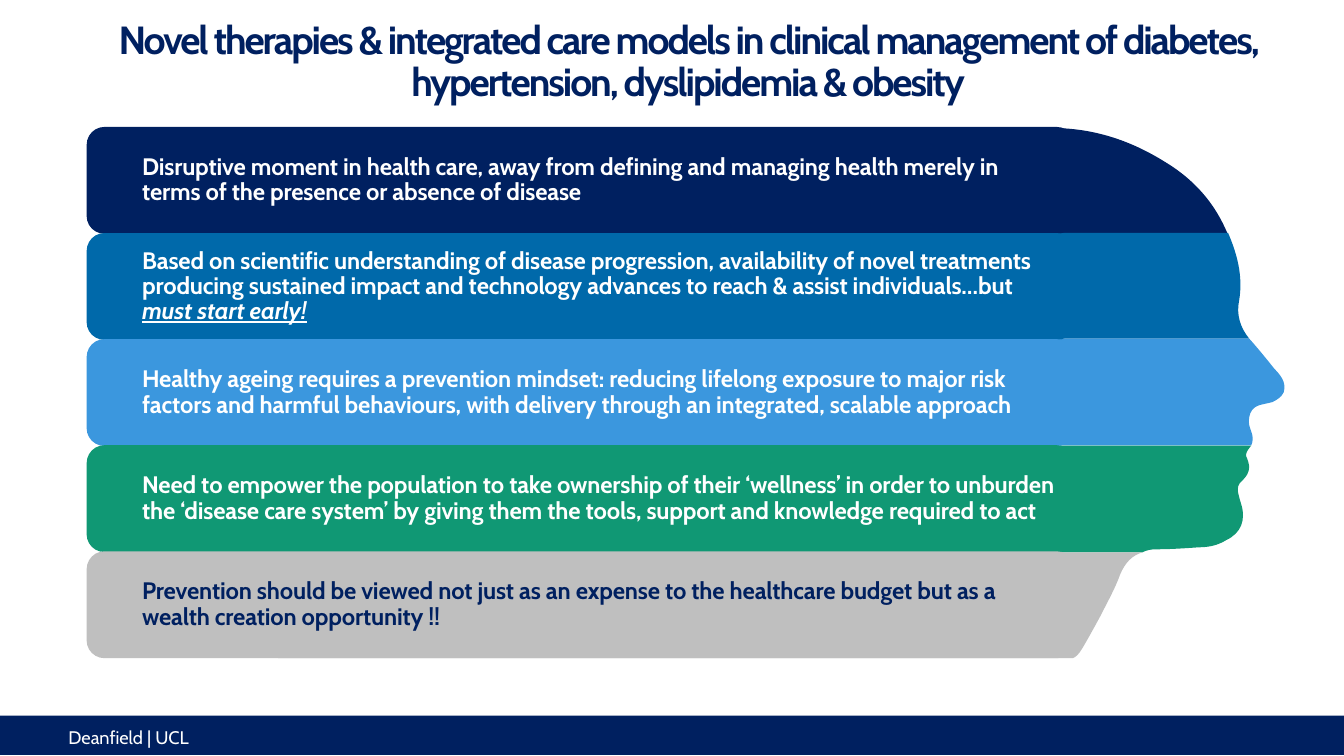
from lxml import etree
from pptx import Presentation
from pptx.dml.color import RGBColor
from pptx.enum.shapes import MSO_SHAPE as Shape
from pptx.enum.text import MSO_ANCHOR as Anchor, PP_ALIGN as Align
from pptx.oxml.ns import qn
from pptx.util import Inches, Pt

NAVY = RGBColor(0x00, 0x20, 0x60)
BLUE = RGBColor(0x00, 0x69, 0xAA)
SKY = RGBColor(0x3B, 0x97, 0xDE)
GREEN = RGBColor(0x10, 0x98, 0x74)
GREY = RGBColor(0xBF, 0xBF, 0xBF)
WHITE = RGBColor(0xFF, 0xFF, 0xFF)
FONT = "Cabin"
BAND_LEFT, BAND_WIDTH, BAND_HEIGHT = 0.86, 9.8, 1.06
FIRST_TOP, LAST_TOP = 1.26, 5.47
CAP_LEFT, CAP_SHIFT, CAP_RADIUS = 4.21, 0.485, 0.53

# Each band: fill, text colour, plain text, emphasised ending
BANDS = [
    (NAVY, WHITE, "Disruptive moment in health care, away from defining and managing health "
     "merely in terms of the presence or absence of disease", ""),
    (BLUE, WHITE, "Based on scientific understanding of disease progression, availability of "
     "novel treatments producing sustained impact and technology advances to reach & assist "
     "individuals…but ", "must start early!"),
    (SKY, WHITE, "Healthy ageing requires a prevention mindset: reducing lifelong exposure to "
     "major risk factors and harmful behaviours, with delivery through an integrated, "
     "scalable approach", ""),
    (GREEN, WHITE, "Need to empower the population to take ownership of their ‘wellness’ in "
     "order to unburden the ‘disease care system’ by giving them the tools, support and "
     "knowledge required to act", ""),
    (GREY, NAVY, "Prevention should be viewed not just as an expense to the healthcare budget "
     "but as a wealth creation opportunity !!", ""),
]

# Right edge of each head slice: first point, then cubic curves (two controls, end)
PROFILES = [
    ((10.43, 1.27), [
        ((10.84, 1.27), (11.21, 1.39), (11.56, 1.61)),
        ((11.84, 1.78), (12.05, 2.01), (12.18, 2.33))]),
    ((12.18, 2.31), [
        ((12.27, 2.52), (12.33, 2.74), (12.29, 2.98)),
        ((12.26, 3.12), (12.3, 3.25), (12.39, 3.36))]),
    ((12.39, 3.36), [
        ((12.48, 3.46), (12.56, 3.56), (12.64, 3.66)),
        ((12.66, 3.68), (12.68, 3.7), (12.7, 3.73)),
        ((12.73, 3.77), (12.74, 3.81), (12.74, 3.85)),
        ((12.74, 3.91), (12.7, 3.95), (12.62, 3.99)),
        ((12.58, 4), (12.53, 4.01), (12.49, 4.02)),
        ((12.43, 4.04), (12.4, 4.08), (12.39, 4.14)),
        ((12.38, 4.19), (12.39, 4.23), (12.41, 4.28)),
        ((12.43, 4.33), (12.43, 4.38), (12.41, 4.42))]),
    ((12.41, 4.42), [
        ((12.4, 4.43), (12.39, 4.45), (12.38, 4.46)),
        ((12.36, 4.49), (12.35, 4.52), (12.37, 4.55)),
        ((12.38, 4.58), (12.39, 4.61), (12.39, 4.63)),
        ((12.39, 4.69), (12.36, 4.73), (12.32, 4.77)),
        ((12.28, 4.8), (12.27, 4.84), (12.28, 4.89)),
        ((12.29, 4.93), (12.3, 4.97), (12.31, 5)),
        ((12.36, 5.16), (12.31, 5.29), (12.16, 5.36)),
        ((12.08, 5.41), (11.99, 5.43), (11.89, 5.43)),
        ((11.75, 5.44), (11.61, 5.45), (11.47, 5.45)),
        ((11.41, 5.45), (11.37, 5.46), (11.33, 5.48))]),
    ((11.33, 5.48), [
        ((11.23, 5.51), (11.16, 5.58), (11.11, 5.7)),
        ((11.06, 5.84), (10.98, 5.98), (10.91, 6.12)),
        ((10.85, 6.23), (10.79, 6.34), (10.73, 6.44)),
        ((10.7, 6.49), (10.67, 6.52), (10.64, 6.53))]),
]


def paint(shape, color):
    shape.fill.solid()
    shape.fill.fore_color.rgb = color
    shape.line.fill.background()
    shape.shadow.inherit = False


def style(span, size, color, bold=False, spacing=0):
    span.font.name = FONT
    span.font.size = Pt(size)
    span.font.bold = bold
    span.font.color.rgb = color
    if spacing:
        span._r.get_or_add_rPr().set("spc", str(round(spacing * 100)))


def bend_segment(segment, controls, shape):
    """Turn a straight outline segment into a cubic curve."""
    segment.tag = qn("a:cubicBezTo")
    for index, (x, y) in enumerate(controls):
        point = etree.Element(qn("a:pt"), x=str(Inches(x) - shape.left),
                              y=str(Inches(y) - shape.top))
        segment.insert(index, point)


def add_head_slice(page, left, profile, color):
    start, edge = profile
    top, bottom = start[1], edge[-1][2][1]
    middle, shoulder = (top + bottom) / 2, left + CAP_RADIUS
    pull = CAP_RADIUS * 0.45
    cap = [((left + pull, bottom), (left, bottom - pull), (left, middle)),
           ((left, top + pull), (left + pull, top), (shoulder, top))]
    # A straight base joins the edge to the rounded cap
    segments = edge + [(None, None, (shoulder, bottom))] + cap
    builder = page.shapes.build_freeform(Inches(start[0]), Inches(start[1]))
    builder.add_line_segments([(Inches(x), Inches(y)) for _, _, (x, y) in segments], close=True)
    head = builder.convert_to_shape()
    lines = list(head._element.iter(qn("a:lnTo")))
    for line, (first, second, _) in zip(lines, segments):
        if first:
            bend_segment(line, (first, second), head)
    paint(head, color)


def add_band(page, left, top, width, height, band):
    fill, color, text, emphasis = band
    box = page.shapes.add_shape(Shape.ROUNDED_RECTANGLE, Inches(left), Inches(top),
                                Inches(width), Inches(height))
    paint(box, fill)
    frame = box.text_frame
    frame.word_wrap = True
    frame.vertical_anchor = Anchor.MIDDLE
    frame.text = text
    para = frame.paragraphs[0]
    para.alignment = Align.LEFT
    para.line_spacing = Pt(18)
    para._p.get_or_add_pPr().set("marL", str(Inches(0.4)))
    if emphasis:
        ending = para.add_run()
        ending.text = emphasis
        ending.font.italic = ending.font.underline = True
    for span in para.runs:
        style(span, 17, color, bold=True, spacing=-0.13)


def add_title(page, left, top, width, height):
    box = page.shapes.add_textbox(Inches(left), Inches(top), Inches(width), Inches(height))
    frame = box.text_frame
    frame.word_wrap = True
    frame.vertical_anchor = Anchor.MIDDLE
    frame.margin_left = frame.margin_right = Inches(0.03)
    frame.text = ("Novel therapies & integrated care models in clinical management of "
                  "diabetes, hypertension, dyslipidemia & obesity")
    para = frame.paragraphs[0]
    para.alignment = Align.CENTER
    para.line_spacing = 0.9
    style(para.runs[0], 28, NAVY, bold=True, spacing=-1.45)


def add_footer(page, left, top, width, height):
    bar = page.shapes.add_shape(Shape.RECTANGLE, Inches(left), Inches(top),
                                Inches(width), Inches(height))
    paint(bar, NAVY)
    box = page.shapes.add_textbox(Inches(left + 0.58), Inches(top + 0.05),
                                  Inches(1.61), Inches(0.32))
    frame = box.text_frame
    frame.word_wrap = True
    frame.vertical_anchor = Anchor.MIDDLE
    frame.text = "Deanfield | UCL"
    style(frame.paragraphs[0].runs[0], 13, WHITE)


def main():
    deck = Presentation()
    deck.slide_width, deck.slide_height = Inches(13.33), Inches(7.5)
    page = deck.slides.add_slide(deck.slide_layouts[6])
    add_footer(page, 0, 7.1, 13.33, 0.39)
    # Head silhouette behind the bands
    for row, (profile, band) in enumerate(zip(PROFILES, BANDS)):
        add_head_slice(page, CAP_LEFT - row * CAP_SHIFT, profile, band[0])
    # Message bands
    step = (LAST_TOP - FIRST_TOP) / (len(BANDS) - 1)
    for row, band in enumerate(BANDS):
        add_band(page, BAND_LEFT, FIRST_TOP + row * step, BAND_WIDTH, BAND_HEIGHT, band)
    add_title(page, 0.16, 0.24, 13.33, 0.76)
    deck.save("out.pptx")


if __name__ == "__main__":
    main()
